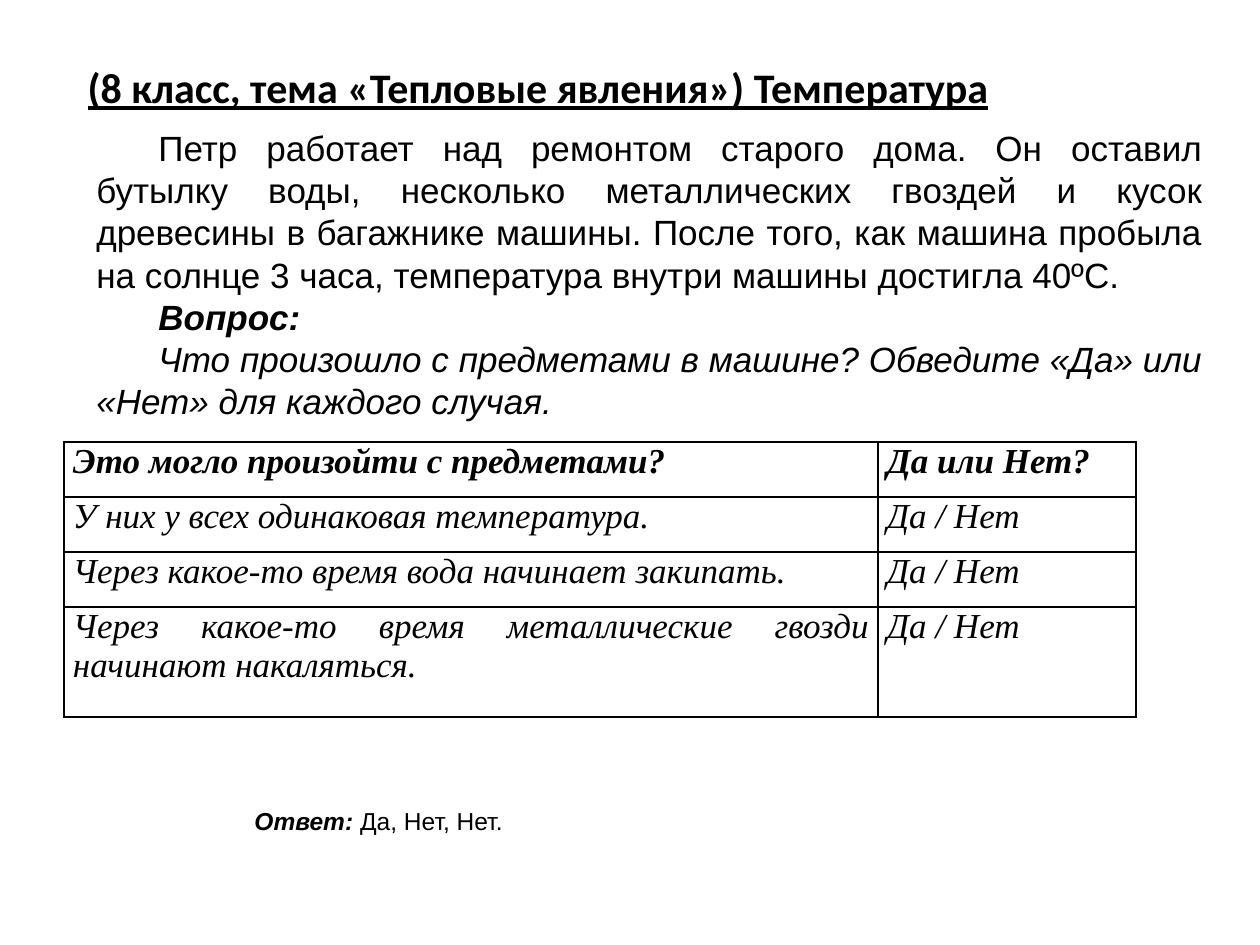
from dataclasses import dataclass

from lxml.etree import SubElement
from pptx import Presentation
from pptx.dml.color import RGBColor
from pptx.enum.text import MSO_ANCHOR as Anchor, MSO_AUTO_SIZE as AutoSize, PP_ALIGN as Align
from pptx.oxml.ns import qn
from pptx.util import Emu, Pt

EMU_PER_PX = 914400 / 126
COLORS = {"text": "000000", "border": "000000", "background": "FFFFFF"}
FIRST_LINE_INDENT = 62
CELL_MARGIN = 9
ROW_HEIGHTS = [55, 55, 55, 110]
COLUMN_WIDTHS = [814, 258]


@dataclass(frozen=True)
class Area:
    left: int
    top: int
    width: int
    height: int


@dataclass(frozen=True)
class Span:
    text: str
    bold: bool = False
    italic: bool = False
    underline: bool = False


YES_NO = "Да / Нет"
ROWS = [
    ("Это могло произойти с предметами?", "Да или Нет?"),
    ("У них у всех одинаковая температура.", YES_NO),
    ("Через какое-то время вода начинает закипать.", YES_NO),
    ("Через какое-то время металлические гвозди начинают накаляться.", YES_NO),
]
TASK = [
    [Span("Петр работает над ремонтом старого дома. Он оставил бутылку воды, "
          "несколько металлических гвоздей и кусок древесины в багажнике машины. "
          "После того, как машина пробыла на солнце 3 часа, температура внутри "
          "машины достигла 40ºC.")],
    [Span("Вопрос: ", bold=True, italic=True)],
    [Span("Что произошло с предметами в машине? Обведите «Да» или «Нет» "
          "для каждого случая.", italic=True)],
]
ANSWER = [[Span("Ответ:", bold=True, italic=True), Span(" Да, Нет, Нет.")]]


def px(length: int) -> Emu:
    return Emu(round(length * EMU_PER_PX))


def place(area: Area) -> list[Emu]:
    return [px(length) for length in (area.left, area.top, area.width, area.height)]


def add_spans(para, spans: list[Span], font: str, size: int, align=Align.JUSTIFY) -> None:
    para.alignment = align
    for span in spans:
        run = para.add_run()
        run.text = span.text
        run.font.name = font
        run.font.size = Pt(size)
        run.font.bold = span.bold
        run.font.italic = span.italic
        run.font.underline = span.underline
        run.font.color.rgb = RGBColor.from_string(COLORS["text"])


def fill_title(title, area: Area, spans: list[Span]) -> None:
    title.left, title.top, title.width, title.height = place(area)
    frame = title.text_frame
    frame.word_wrap = False
    frame.auto_size = AutoSize.SHAPE_TO_FIT_TEXT
    frame.vertical_anchor = Anchor.TOP
    add_spans(frame.paragraphs[0], spans, "Calibri", 24, Align.LEFT)


def add_text(page, area: Area, paragraphs: list[list[Span]], size: int, anchor=Anchor.TOP) -> None:
    """Add justified paragraphs with an indented first line."""
    frame = page.shapes.add_textbox(*place(area)).text_frame
    frame.word_wrap = True
    frame.auto_size = AutoSize.SHAPE_TO_FIT_TEXT
    frame.vertical_anchor = anchor
    for index, spans in enumerate(paragraphs):
        para = frame.add_paragraph() if index else frame.paragraphs[0]
        add_spans(para, spans, "Arial", size)
        properties = para._p.get_or_add_pPr()
        properties.set("marL", "0")
        properties.set("indent", str(px(FIRST_LINE_INDENT)))


def add_borders(cell) -> None:
    properties = cell._tc.get_or_add_tcPr()
    for side in ("lnL", "lnR", "lnT", "lnB"):
        line = SubElement(properties, qn(f"a:{side}"), w=str(Pt(1)))
        fill = SubElement(line, qn("a:solidFill"))
        SubElement(fill, qn("a:srgbClr"), val=COLORS["border"])


def add_question_table(page, left: int, top: int) -> None:
    area = Area(left, top, sum(COLUMN_WIDTHS), sum(ROW_HEIGHTS))
    table = page.shapes.add_table(len(ROWS), len(COLUMN_WIDTHS), *place(area)).table
    table.first_row = table.horz_banding = False
    for column, width in zip(table.columns, COLUMN_WIDTHS):
        column.width = px(width)
    for row_index, (row, height, texts) in enumerate(zip(table.rows, ROW_HEIGHTS, ROWS)):
        row.height = px(height)
        for cell, text in zip(row.cells, texts):
            cell.margin_left = cell.margin_right = px(CELL_MARGIN)
            cell.margin_top = cell.margin_bottom = 0
            add_borders(cell)
            cell.fill.background()
            span = Span(text, bold=row_index == 0, italic=True)
            add_spans(cell.text_frame.paragraphs[0], [span], "Times New Roman", 20)


def main() -> None:
    deck = Presentation()
    deck.slide_width, deck.slide_height = px(1260), px(945)
    page = deck.slides.add_slide(deck.slide_layouts.get_by_name("Title Only"))
    background = page.background.fill
    background.solid()
    background.fore_color.rgb = RGBColor.from_string(COLORS["background"])

    heading = Span("(8 класс, тема «Тепловые явления») Температура", bold=True, underline=True)
    fill_title(page.shapes.title, Area(75, 55, 936, 63), [heading])
    add_question_table(page, 64, 442)
    add_text(page, Area(84, 119, 1131, 310), TASK, 20, Anchor.MIDDLE)
    add_text(page, Area(180, 800, 370, 43), ANSWER, 14)
    deck.save("out.pptx")


if __name__ == "__main__":
    main()
